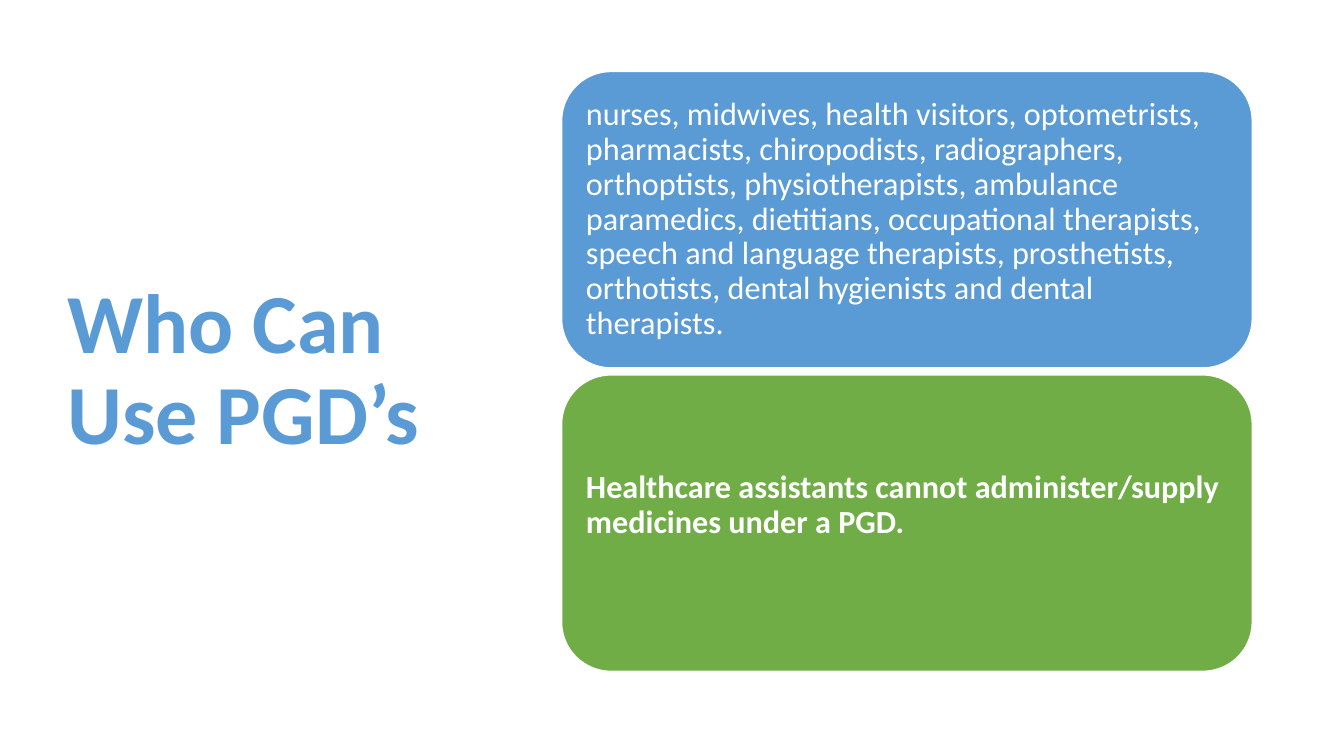
from dataclasses import dataclass

from pptx import Presentation
from pptx.dml.color import RGBColor
from pptx.enum.shapes import MSO_SHAPE
from pptx.enum.text import MSO_ANCHOR, PP_ALIGN
from pptx.util import Inches, Pt


@dataclass(frozen=True)
class Theme:
    font: str = "Calibri"
    title_size: int = 60
    card_size: int = 23
    blue: RGBColor = RGBColor(0x5B, 0x9B, 0xD5)
    green: RGBColor = RGBColor(0x70, 0xAD, 0x47)
    white: RGBColor = RGBColor(0xFF, 0xFF, 0xFF)


theme = Theme()


def write_text(shape, text, size, color, bold):
    frame = shape.text_frame
    frame.word_wrap = True
    frame.vertical_anchor = MSO_ANCHOR.MIDDLE
    paragraph = frame.paragraphs[0]
    paragraph.text = text
    paragraph.alignment = PP_ALIGN.LEFT
    paragraph.line_spacing = 0.9
    paragraph.font.name = theme.font
    paragraph.font.size = Pt(size)
    paragraph.font.bold = bold
    paragraph.font.color.rgb = color


presentation = Presentation()
presentation.slide_width = Inches(13.33)
presentation.slide_height = Inches(7.5)
slide = presentation.slides.add_slide(presentation.slide_layouts[6])

# Title on the left
title = slide.shapes.add_textbox(Inches(0.57), Inches(0.68), Inches(4.16), Inches(6.02))
write_text(title, "Who Can Use PGD’s", theme.title_size, theme.blue, True)

# Stacked cards: text, fill, bold, bottom inset (larger lifts the text)
cards = [
    ("nurses, midwives, health visitors, optometrists, pharmacists, chiropodists, "
     "radiographers, orthoptists, physiotherapists, ambulance paramedics, dietitians, "
     "occupational therapists, speech and language therapists, prosthetists, orthotists, "
     "dental hygienists and dental therapists.", theme.blue, False, 0.1),
    ("Healthcare assistants cannot administer/supply medicines under a PGD.",
     theme.green, True, 0.45),
]
card_top, card_height, card_pitch = 0.71, 2.94, 3.01

for index, (text, fill, bold, bottom_inset) in enumerate(cards):
    card = slide.shapes.add_shape(
        MSO_SHAPE.ROUNDED_RECTANGLE,
        Inches(5.57), Inches(card_top + index * card_pitch),
        Inches(6.85), Inches(card_height))
    card.shadow.inherit = False
    card.fill.solid()
    card.fill.fore_color.rgb = fill
    card.line.color.rgb = theme.white
    card.line.width = Pt(1)
    frame = card.text_frame
    frame.margin_left = frame.margin_right = frame.margin_top = Inches(0.1)
    frame.margin_bottom = Inches(bottom_inset)
    write_text(card, text, theme.card_size, theme.white, bold)

presentation.save("out.pptx")
